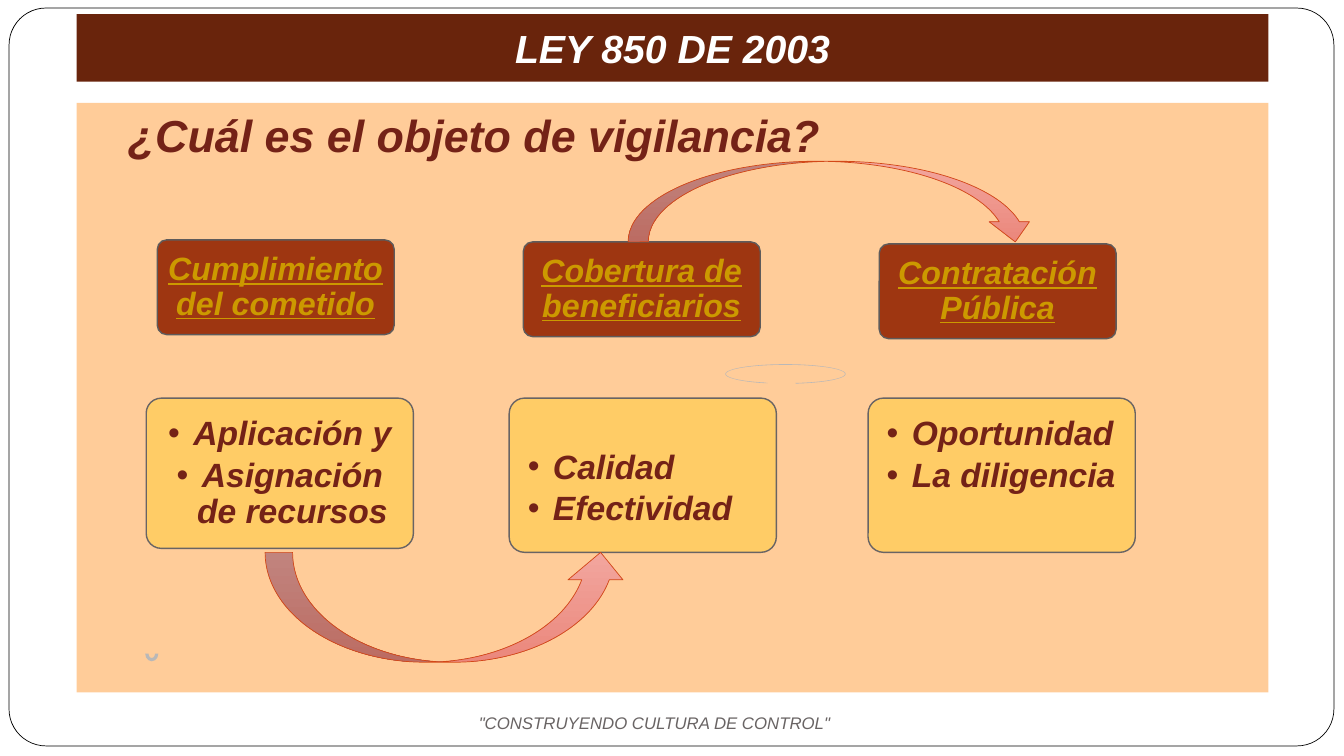
"""Builds the slide about what Law 850 of 2003 places under oversight."""
from dataclasses import dataclass

from lxml import etree
from pptx import Presentation
from pptx.dml.color import RGBColor
from pptx.enum.shapes import MSO_SHAPE
from pptx.enum.text import MSO_ANCHOR, PP_ALIGN
from pptx.oxml.ns import qn
from pptx.util import Emu, Pt

PX = 9144
RECTANGLE, ROUNDED = MSO_SHAPE.RECTANGLE, MSO_SHAPE.ROUNDED_RECTANGLE
BLOCK_ARC, CIRCULAR_ARROW = MSO_SHAPE.BLOCK_ARC, MSO_SHAPE.LEFT_CIRCULAR_ARROW
UP_ARROW, DOWN_ARROW = MSO_SHAPE.CURVED_UP_ARROW, MSO_SHAPE.CURVED_DOWN_ARROW
LEFT, CENTER = PP_ALIGN.LEFT, PP_ALIGN.CENTER
JUSTIFY = PP_ALIGN.JUSTIFY
TOP, MIDDLE, BOTTOM = MSO_ANCHOR.TOP, MSO_ANCHOR.MIDDLE, MSO_ANCHOR.BOTTOM


@dataclass(frozen=True)
class Theme:
    font: str = "Arial"
    white: str = "FFFFFF"
    black: str = "000000"
    banner: str = "69240C"
    panel: str = "FFCC99"
    card: str = "FFCC66"
    card_line: str = "696464"
    header: str = "9E3611"
    header_line: str = "5F5B5B"
    gold: str = "CC9900"
    maroon: str = "742217"
    ornament: str = "B9B8B8"
    arrow_light: str = "F2A69E"
    arrow_dark: str = "EB877C"
    arrow_line: str = "D34817"
    title_size: int = 28
    question_size: int = 32
    header_size: int = 23
    card_size: int = 24
    footer_size: int = 12


@dataclass(frozen=True)
class Box:
    left: int
    top: int
    width: int
    height: int

    def emu(self) -> tuple[Emu, ...]:
        """Return the four lengths in EMU."""
        return tuple(Emu(v * PX) for v in (self.left, self.top, self.width, self.height))


@dataclass(frozen=True)
class TextStyle:
    size: int
    color: str
    align: PP_ALIGN = CENTER
    anchor: MSO_ANCHOR = MIDDLE
    insets: tuple[int, int, int, int] = (10, 5, 10, 5)
    bold: bool = True
    underline: bool = False
    line_spacing: float = 1.0
    before: int = 0
    after: int = 0
    margin: int = 0
    bullet: bool = False


@dataclass(frozen=True)
class Topic:
    header: str
    header_box: Box
    items: tuple[str, ...]
    card_box: Box
    align: PP_ALIGN = LEFT
    text_drop: int = 0


@dataclass(frozen=True)
class Ornament:
    kind: MSO_SHAPE
    box: Box
    adjustments: tuple[float, ...] = ()


THEME = Theme()
TOPICS = (
    Topic("Cumplimiento del cometido", Box(156, 238, 235, 94),
          ("Aplicación y", "Asignación de recursos"), Box(145, 395, 265, 149), CENTER),
    Topic("Cobertura de beneficiarios", Box(519, 240, 235, 94),
          ("Calidad", "Efectividad"), Box(505, 395, 265, 153), text_drop=33),
    Topic("Contratación Pública", Box(872, 242, 235, 94),
          ("Oportunidad", "La diligencia"), Box(861, 395, 265, 153)),
)
ORNAMENTS = (
    Ornament(BLOCK_ARC, Box(144, 641, 13, 15)),
    Ornament(CIRCULAR_ARROW, Box(719, 361, 120, 20), (0.03, 3.24, 202.82, 133.57, 0.03)),
)
ARROWS = ((UP_ARROW, Box(263, 548, 360, 109)), (DOWN_ARROW, Box(623, 160, 404, 80)))


def add_block(slide, kind: MSO_SHAPE, box: Box, fill: str, line: str = "",
              line_width: float = 1, adjustments: tuple[float, ...] = ()):
    """Add a filled preset shape with an optional outline."""
    shape = slide.shapes.add_shape(kind, *box.emu())
    shape.shadow.inherit = False
    shape.fill.solid()
    shape.fill.fore_color.rgb = RGBColor.from_string(fill)
    if line:
        shape.line.color.rgb = RGBColor.from_string(line)
        shape.line.width = Pt(line_width)
    else:
        shape.line.fill.background()
    for index, value in enumerate(adjustments):
        shape.adjustments[index] = value
    return shape


def write_text(shape, lines: tuple[str, ...], style: TextStyle) -> None:
    """Write one styled paragraph for each line."""
    frame = shape.text_frame
    frame.word_wrap = True
    frame.vertical_anchor = style.anchor
    (frame.margin_left, frame.margin_top,
     frame.margin_right, frame.margin_bottom) = (Emu(v * PX) for v in style.insets)
    for index, line in enumerate(lines):
        paragraph = frame.add_paragraph() if index else frame.paragraphs[0]
        paragraph.alignment = style.align
        paragraph.line_spacing = style.line_spacing
        paragraph.space_before = Pt(style.before)
        paragraph.space_after = Pt(style.after)
        properties = paragraph._p.get_or_add_pPr()
        properties.set("marL", str(style.margin * PX))
        properties.set("indent", str(-style.margin * PX if style.bullet else 0))
        if style.bullet:
            etree.SubElement(properties, qn("a:buFont")).set("typeface", THEME.font)
            etree.SubElement(properties, qn("a:buChar")).set("char", "•")
        run = paragraph.add_run()
        run.text = line
        run.font.name = THEME.font
        run.font.size = Pt(style.size)
        run.font.bold = style.bold
        run.font.italic = True
        run.font.underline = style.underline
        run.font.color.rgb = RGBColor.from_string(style.color)


def add_topic(slide, topic: Topic) -> None:
    """Add a topic's bulleted card and its header."""
    card = add_block(slide, ROUNDED, topic.card_box, THEME.card, THEME.card_line,
                     adjustments=(0.1,))
    write_text(card, topic.items, TextStyle(
        THEME.card_size, THEME.maroon, topic.align, TOP,
        (14, 14 + topic.text_drop, 14, 14), line_spacing=0.9, after=4,
        margin=25, bullet=True))
    header = add_block(slide, ROUNDED, topic.header_box, THEME.header, THEME.header_line,
                       adjustments=(0.1,))
    write_text(header, (topic.header,), TextStyle(
        THEME.header_size, THEME.gold, insets=(5, 3, 5, 3), underline=True,
        line_spacing=0.9))


def add_arrow(slide, kind: MSO_SHAPE, box: Box) -> None:
    """Add a curved arrow with a top-to-bottom gradient."""
    arrow = add_block(slide, kind, box, THEME.arrow_light, THEME.arrow_line, 0.5)
    arrow.fill.gradient()
    arrow.fill.gradient_angle = 270
    colors = (THEME.arrow_light, THEME.arrow_dark)
    for stop, color in zip(arrow.fill.gradient_stops, colors):
        stop.color.rgb = RGBColor.from_string(color)


def main() -> None:
    """Build and save the presentation."""
    presentation = Presentation()
    presentation.slide_width, presentation.slide_height = Emu(1333 * PX), Emu(750 * PX)
    slide = presentation.slides.add_slide(presentation.slide_layouts[6])
    add_block(slide, ROUNDED, Box(9, 8, 1314, 732), THEME.white, THEME.black, 0.5, (0.05,))
    banner = add_block(slide, RECTANGLE, Box(76, 14, 1182, 67), THEME.banner)
    write_text(banner, ("LEY 850 DE 2003",), TextStyle(
        THEME.title_size, THEME.white, anchor=BOTTOM, insets=(10, 5, 10, 10)))
    panel = add_block(slide, RECTANGLE, Box(76, 102, 1182, 585), THEME.panel)
    write_text(panel, ("¿Cuál es el objeto de vigilancia?",), TextStyle(
        THEME.question_size, THEME.maroon, JUSTIFY, TOP, before=6, margin=41))
    for topic in TOPICS:
        add_topic(slide, topic)
    for ornament in ORNAMENTS:
        shape = add_block(slide, ornament.kind, ornament.box, THEME.ornament,
                          adjustments=ornament.adjustments)
        shape.rotation = 180
    for kind, box in ARROWS:
        add_arrow(slide, kind, box)
    footer = slide.shapes.add_textbox(*Box(465, 699, 399, 37).emu())
    write_text(footer, ('"CONSTRUYENDO CULTURA DE CONTROL"',), TextStyle(
        THEME.footer_size, THEME.card_line, LEFT, bold=False))
    presentation.save("out.pptx")


if __name__ == "__main__":
    main()
